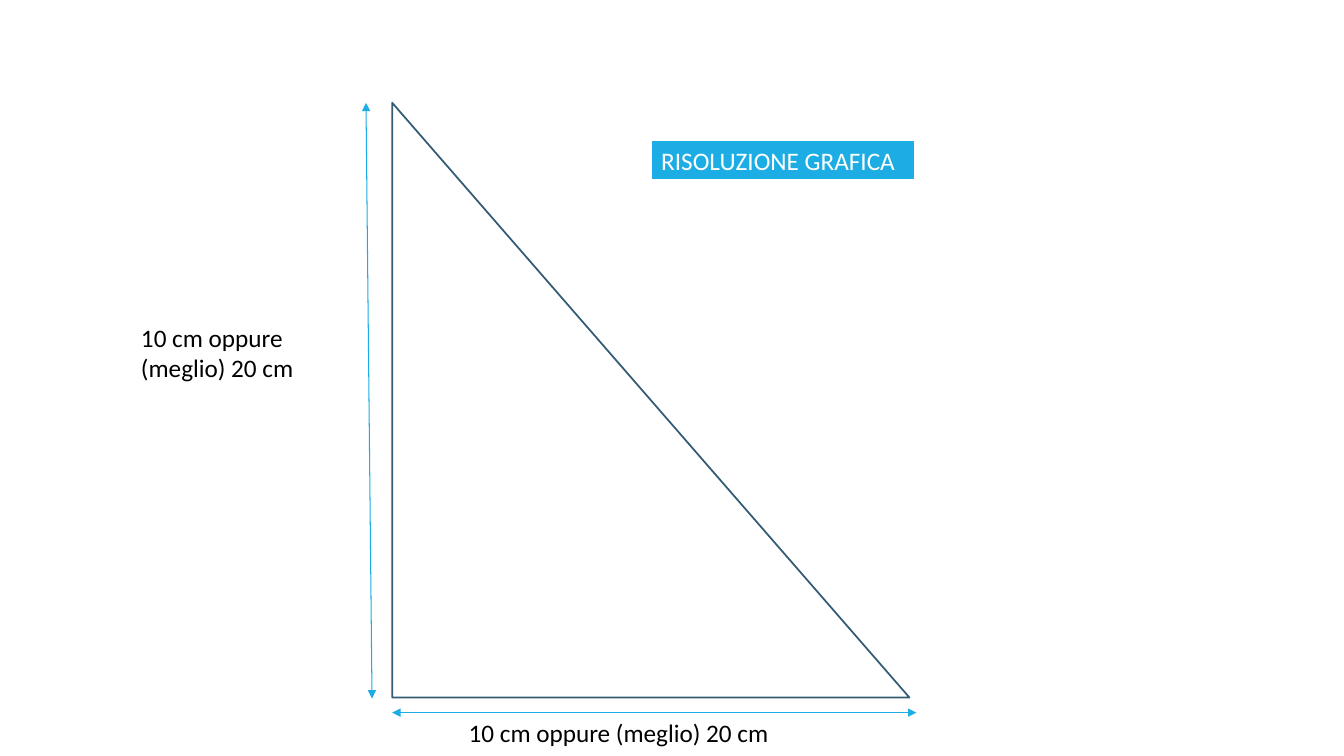
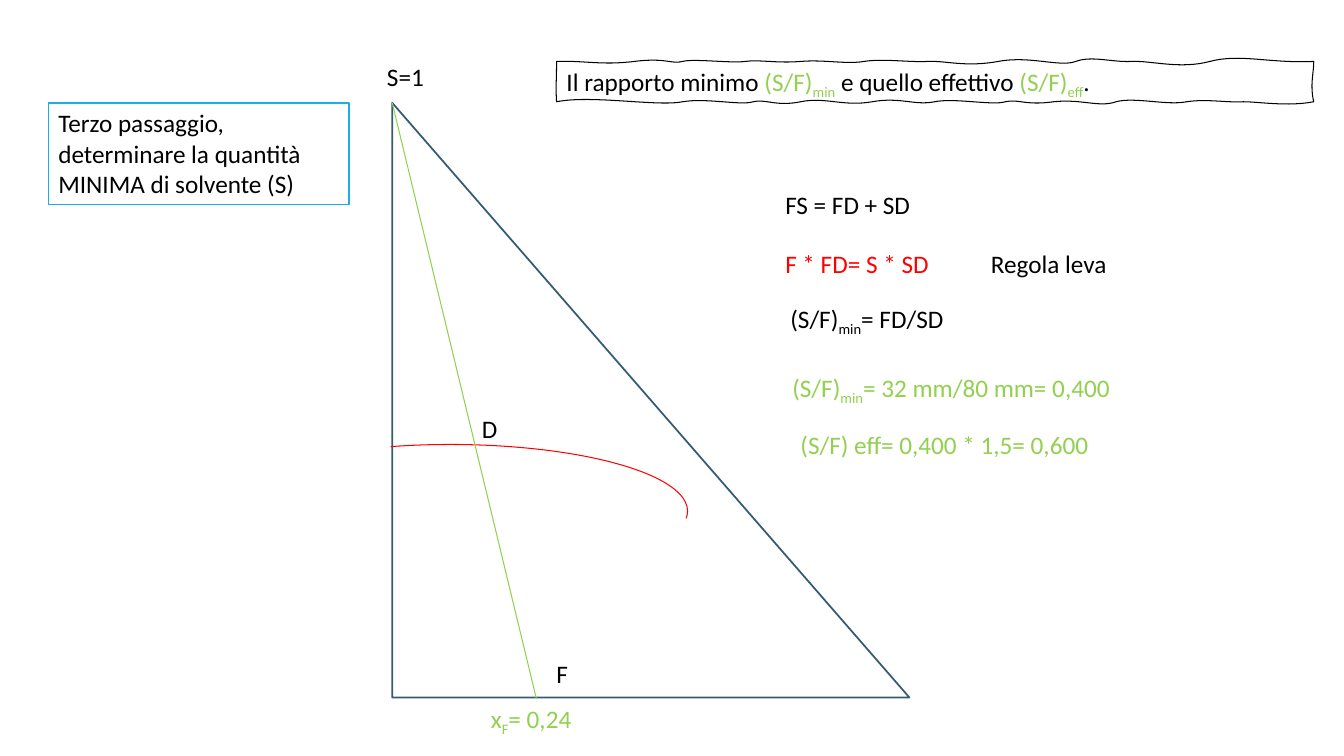
import pptx
import pptx.util
import pptx.dml.color
import pptx.enum.shapes
import pptx.enum.text
import pptx.oxml.ns

Inches = pptx.util.Inches
Pt = pptx.util.Pt
SHAPE = pptx.enum.shapes.MSO_SHAPE
qn = pptx.oxml.ns.qn

THEME = {
    "font": "Calibri", "size": 18, "thin": 0.75, "outline": 1.25, "border": 1.5,
    "black": "000000", "white": "FFFFFF", "blue": "1CADE4",
    "navy": "335B74", "green": "92D050", "red": "FF0000",
}
SUB = "-25000"
TRIANGLE = (3.89, 1.02, 5.13, 5.9)
APEX = (3.89, 1.02)

SIDE_LENGTHS = [
    {"at": (1.3, 3.15, 1.98, 0.71), "wrap": False,
     "text": [[("10 cm oppure", "black")], [("(meglio) 20 cm", "black")]]},
    {"at": (4.55, 7.07, 4.35, 0.4), "text": [[("10 cm oppure (meglio) 20 cm", "black")]]},
]
DIMENSIONS = [((3.63, 1.02), (3.69, 6.93)), ((3.89, 7.07), (9.09, 7.07))]
HEADING = {"at": (6.46, 1.39, 2.62, 0.4), "wrap": False, "fill": "blue",
           "line": ("white", "border"), "text": [[("RISOLUZIONE GRAFICA", "white")]]}

POINT_LABELS = [
    {"at": (4.77, 6.93, 1.15, 0.4), "wrap": False,
     "text": [[("x", "green"), ("F", "green", SUB), ("= 0,24", "green")]]},
    {"at": (3.74, 0.56, 0.63, 0.4), "wrap": False, "text": [[("S=1", "black")]]},
    {"at": (4.68, 4.05, 0.35, 0.4), "wrap": False, "text": [[("D", "black")]]},
    {"at": (5.42, 6.48, 0.31, 0.4), "wrap": False, "text": [[("F", "black")]]},
]
FORMULAS = [
    {"at": (7.69, 1.83, 2.54, 0.4), "text": [[("FS = FD + SD", "black")]]},
    {"at": (7.69, 2.41, 4.34, 0.4), "tab": 2.04,
     "text": [[("F * FD= S * SD\t", "red"), ("Regola leva", "black")]]},
    {"at": (7.74, 2.96, 2.09, 0.4), "wrap": False,
     "text": [[("(S/F)", "black"), ("min", "black", SUB), ("= FD/SD", "black")]]},
    {"at": (7.76, 3.64, 3.57, 0.4), "wrap": False,
     "text": [[("(S/F)", "green"), ("min", "green", SUB),
               ("= 32 mm/80 mm= 0,400", "green")]]},
    {"at": (7.84, 4.21, 3.42, 0.4), "wrap": False,
     "text": [[("(S/F) eff= 0,400 * 1,5= 0,600", "green")]]},
]
STEP = {"at": (0.48, 1.02, 2.98, 1.01), "wrap": False, "fill": "white",
        "line": ("blue", "outline"),
        "text": [[("Terzo passaggio,", "black")], [("determinare la quantità", "black")],
                 [("MINIMA di solvente (S)", "black")]]}
RATIO_TEXT = [[("Il rapporto minimo ", "black"), ("(S/F)", "green"), ("min", "green", SUB),
               (" e quello effettivo ", "black"), ("(S/F)", "green"), ("eff", "green", SUB),
               (".", "black")]]
ARC = {"at": (2.11, 4.41, 4.71, 1.32), "angles": (136.353, 1.069)}
FEED_LINE = (APEX, (5.32, 6.93))

SKETCH_START = (5.52, 0.61)
SKETCH_CURVES = [
    ((5.8, 0.6), (5.97, 0.65), (6.29, 0.61)), ((6.61, 0.57), (6.66, 0.64), (6.77, 0.61)),
    ((6.88, 0.58), (7.26, 0.63), (7.39, 0.61)), ((7.53, 0.59), (7.71, 0.63), (7.94, 0.61)),
    ((8.18, 0.59), (8.39, 0.64), (8.57, 0.61)), ((8.75, 0.58), (9.02, 0.62), (9.2, 0.61)),
    ((9.38, 0.6), (9.57, 0.67), (9.9, 0.61)), ((10.22, 0.55), (10.51, 0.67), (10.67, 0.61)),
    ((10.83, 0.55), (11.03, 0.62), (11.22, 0.61)), ((11.42, 0.6), (11.7, 0.69), (12, 0.61)),
    ((12.3, 0.53), (12.58, 0.63), (13.03, 0.61)), ((13.03, 0.73), (12.99, 0.85), (13.03, 1.01)),
    ((12.77, 1.06), (12.49, 1.01), (12.33, 1.01)), ((12.16, 1.02), (11.97, 0.98), (11.77, 1.01)),
    ((11.58, 1.05), (11.25, 0.96), (11.07, 1.01)), ((10.9, 1.07), (10.73, 0.98), (10.45, 1.01)),
    ((10.17, 1.05), (10.1, 0.98), (9.97, 1.01)), ((9.85, 1.05), (9.47, 0.97), (9.27, 1.01)),
    ((9.07, 1.05), (8.93, 0.96), (8.65, 1.01)), ((8.36, 1.06), (8.19, 0.96), (7.94, 1.01)),
    ((7.7, 1.06), (7.59, 0.98), (7.47, 1.01)), ((7.35, 1.05), (7.01, 0.97), (6.77, 1.01)),
    ((6.52, 1.06), (5.87, 0.94), (5.52, 1.01)), ((5.51, 0.86), (5.52, 0.8), (5.52, 0.61)),
]


def rgb(name):
    return pptx.dml.color.RGBColor.from_string(THEME[name])


def set_all(obj, values):
    for name, value in values.items():
        setattr(obj, name, value)


def add_xml(parent, tag, **attrs):
    el = parent.makeelement(qn(tag), attrs)
    parent.append(el)
    return el


def style(sp, fill=None, line=None):
    sp.shadow.inherit = False
    if fill:
        sp.fill.solid()
        sp.fill.fore_color.rgb = rgb(fill)
    else:
        sp.fill.background()
    if line:
        color, width = line
        sp.line.color.rgb = rgb(color)
        sp.line.width = Pt(THEME[width])


def write(sp, paragraphs, wrap=True, tab=None):
    tf = sp.text_frame
    set_all(tf, {
        "word_wrap": wrap,
        "auto_size": pptx.enum.text.MSO_AUTO_SIZE.SHAPE_TO_FIT_TEXT,
        "vertical_anchor": pptx.enum.text.MSO_ANCHOR.TOP,
    })
    for i, runs in enumerate(paragraphs):
        p = tf.add_paragraph() if i else tf.paragraphs[0]
        p.alignment = pptx.enum.text.PP_ALIGN.LEFT
        if tab:
            tabs = add_xml(p._p.get_or_add_pPr(), "a:tabLst")
            add_xml(tabs, "a:tab", pos=str(Inches(tab)), algn="l")
        for text, color, *baseline in runs:
            r = p.add_run()
            r.text = text
            set_all(r.font, {"name": THEME["font"], "size": Pt(THEME["size"])})
            r.font.color.rgb = rgb(color)
            if baseline:
                r._r.get_or_add_rPr().set("baseline", baseline[0])


def add_shape(s, kind, at, fill=None, line=None):
    sp = s.shapes.add_shape(kind, *map(Inches, at))
    style(sp, fill, line)
    return sp


def add_text(s, item):
    sp = s.shapes.add_textbox(*map(Inches, item["at"]))
    write(sp, item["text"], item.get("wrap", True), item.get("tab"))


def add_panel(s, item):
    sp = add_shape(s, SHAPE.RECTANGLE, item["at"], item["fill"], item["line"])
    write(sp, item["text"], item["wrap"])


def add_line(s, start, end, color, arrows=False):
    cx = s.shapes.add_connector(pptx.enum.shapes.MSO_CONNECTOR.STRAIGHT,
                                *map(Inches, start + end))
    cx.line.color.rgb = rgb(color)
    cx.line.width = Pt(THEME["thin"])
    if arrows:
        ln = cx.line._get_or_add_ln()
        for tag in ("a:headEnd", "a:tailEnd"):
            add_xml(ln, tag, type="triangle")
    add_xml(cx._element.spPr, "a:effectLst")


def add_sketch(s):
    fb = s.shapes.build_freeform(*map(Inches, SKETCH_START))
    fb.add_line_segments([tuple(map(Inches, curve[-1])) for curve in SKETCH_CURVES])
    sp = fb.convert_to_shape()
    segments = list(sp._element.iter(qn("a:lnTo")))
    for segment, curve in zip(segments, SKETCH_CURVES):
        bezier = segment.makeelement(qn("a:cubicBezTo"), {})
        for x, y in curve:
            add_xml(bezier, "a:pt", x=str(Inches(x) - sp.left), y=str(Inches(y) - sp.top))
        segment.getparent().replace(segment, bezier)
    style(sp, line=("black", "thin"))
    write(sp, RATIO_TEXT)


def new_slide(prs):
    s = prs.slides.add_slide(prs.slide_layouts[6])
    add_shape(s, SHAPE.RIGHT_TRIANGLE, TRIANGLE, line=("navy", "outline"))
    return s


def build_dimensions(prs):
    s = new_slide(prs)
    for start, end in DIMENSIONS:
        add_line(s, start, end, "blue", arrows=True)
    for item in SIDE_LENGTHS:
        add_text(s, item)
    add_panel(s, HEADING)


def build_minimum_solvent(prs):
    s = new_slide(prs)
    arc = add_shape(s, SHAPE.ARC, ARC["at"], line=("red", "thin"))
    for i, angle in enumerate(ARC["angles"]):
        arc.adjustments[i] = angle
    add_sketch(s)
    add_line(s, *FEED_LINE, "green")
    for item in POINT_LABELS + FORMULAS:
        add_text(s, item)
    add_panel(s, STEP)


def main():
    prs = pptx.Presentation()
    set_all(prs, {"slide_width": Inches(13.33), "slide_height": Inches(7.5)})
    build_dimensions(prs)
    build_minimum_solvent(prs)
    prs.save("out.pptx")


if __name__ == "__main__":
    main()
